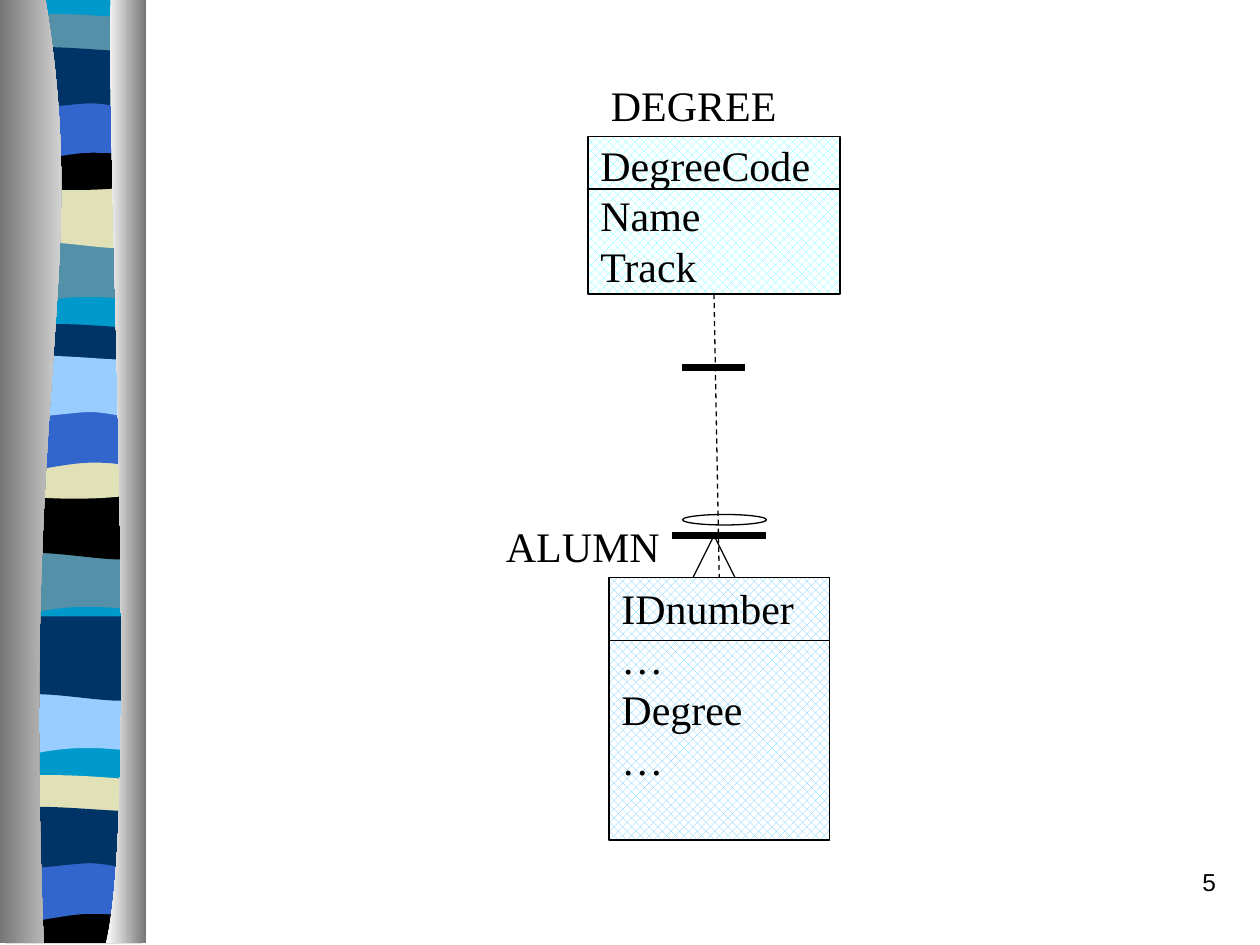
"""Build an entity-relationship slide for DEGREE and ALUMN beside a wavy striped border."""
from lxml.etree import SubElement
from pptx import Presentation
from pptx.dml.color import RGBColor
from pptx.enum.dml import MSO_LINE, MSO_PATTERN
from pptx.enum.shapes import MSO_CONNECTOR, MSO_SHAPE
from pptx.enum.text import MSO_ANCHOR, PP_ALIGN
from pptx.oxml.ns import qn
from pptx.util import Pt

COLORS = {
    "black": "000000", "white": "FFFFFF", "cyan": "0099CC", "teal": "5490A8",
    "sand": "E1E1B7", "blue": "3366CC", "navy": "003366", "sky": "99CCFF",
    "grey": "767676", "aqua": "66FFFF", "azure": "66CCFF",
}
COLORS = {name: RGBColor.from_string(value) for name, value in COLORS.items()}

WAVES = {
    "ebb": [(78, 0), (78, 39), (24, 31, 14, 45, 0, 39), (0, 0)],
    "swell": [(78, -7), (78, 39), (65, 46, 24, 33, 0, 39), (0, -7)],
    "arch": [(78, -4), (78, 17), (65, 20, 13, 20, 0, 17), (0, -4),
             (5, -8, 17, -7, 30, -7), (43, -7, 68, -5, 78, -4)],
    "sag": [(78, 0), (78, 27), (65, 32, 13, 32, 0, 27), (0, 0), (48, 4, 62, 0, 78, 0)],
    "dome": [(78, 0), (78, 40), (66, 34, 61, 34, 48, 34), (35, 34, 12, 40, 0, 40), (0, 0)],
    "ripple": [(78, -4), (78, 26), (73, 32, 61, 26, 48, 26), (35, 26, 8, 32, 0, 26),
               (0, -4), (11, -9, 53, -4, 66, -4)],
}
STRIPES = [
    (4, {"ebb": (133.2, "teal"), "swell": (100.8, "sand"), "arch": (15.1, "teal"),
         "sag": (77.8, "black"), "dome": (53.3, "blue"), "ripple": (33.1, "navy")}),
    (3.6, {"ebb": (310.3, "teal"), "swell": (278.6, "black"), "arch": (192.2, "navy"),
           "sag": (254.2, "sand"), "dome": (230.4, "blue"), "ripple": (209.5, "sky")}),
    (3.2, {"ebb": (391, "sky"), "swell": (359.3, "navy"), "arch": (450, "sand"),
           "sag": (512.6, "black"), "dome": (488.2, "blue"), "ripple": (467.3, "navy")}),
]
CURTAINS = [
    ([(26, 0), (52, 156, 12, 213, 25, 539), (0, 539), (0, 0)], ("grey", "white")),
    ([(63.4, 0), (60.5, 90, 80, 465, 60.5, 539), (83.5, 539), (83.5, 0)], ("white", "grey")),
]

presentation = Presentation()
presentation.slide_width, presentation.slide_height = Pt(720), Pt(540)
slide = presentation.slides.add_slide(presentation.slide_layouts[6])
shapes = slide.shapes
border = shapes.add_group_shape()


def add_outline(left, top, segments):
    """Draw a closed outline from line ends and cubic curves."""
    points = [(Pt(left + x), Pt(min(top + y, 539)))
              for segment in segments for x, y in zip(segment[::2], segment[1::2])]
    builder = border.shapes.build_freeform(*points[0])
    builder.add_line_segments(points[1:], close=True)
    outline = builder.convert_to_shape()
    lines = iter(list(outline._element.iter(qn("a:lnTo"))))
    for segment in segments[1:]:
        line = next(lines)
        if len(segment) == 6:
            curve = line.makeelement(qn("a:cubicBezTo"))
            line.addprevious(curve)
            for part in (line, next(lines), next(lines)):
                curve.append(part[0])
                part.getparent().remove(part)
    outline.shadow.inherit = False
    outline.line.fill.background()
    return outline


def write_text(shape, lines, size=24, font="Times New Roman", align=PP_ALIGN.LEFT, margin=3.6):
    """Fill a shape with one paragraph for each line."""
    frame_format = {"word_wrap": True, "vertical_anchor": MSO_ANCHOR.TOP, "margin_top": Pt(margin)}
    font_format = {"size": Pt(size), "name": font}
    frame = shape.text_frame
    frame.text = "\n".join(lines)
    for name, value in frame_format.items():
        setattr(frame, name, value)
    for paragraph in frame.paragraphs:
        paragraph.alignment = align
        for name, value in font_format.items():
            setattr(paragraph.runs[0].font, name, value)
        paragraph.runs[0].font.color.rgb = COLORS["black"]


backdrop = add_outline(4.3, 0, [(0, 0), (78, 0), (78, 538), (0, 538)])
backdrop.fill.solid()
backdrop.fill.fore_color.rgb = COLORS["cyan"]

for left, stripes in STRIPES:
    for wave, (top, color) in stripes.items():
        stripe = add_outline(left, top, WAVES[wave])
        stripe.fill.solid()
        stripe.fill.fore_color.rgb = COLORS[color]

for segments, colors in CURTAINS:
    curtain = add_outline(0, 0, segments)
    curtain.fill.gradient()
    curtain.fill.gradient_angle = 0
    for stop, color in zip(curtain.fill.gradient_stops, colors):
        stop.color.rgb = COLORS[color]

slide_number = shapes.add_textbox(Pt(552), Pt(492), Pt(150), Pt(36))
write_text(slide_number, ["5"], 14, "Arial", PP_ALIGN.RIGHT)

entities = []
for left, top, width, height, color, margin, lines in [
    (336, 78, 144, 90, "aqua", 1.7, ["DegreeCode", "Name", "Track"]),
    (348, 330, 126, 150, "azure", 2.8, ["IDnumber", "…", "Degree", "…"]),
]:
    entity = shapes.add_shape(MSO_SHAPE.FLOWCHART_PROCESS, Pt(left), Pt(top), Pt(width), Pt(height))
    entity.fill.patterned()
    entity.fill.pattern = MSO_PATTERN.PERCENT_50
    entity.fill.fore_color.rgb = COLORS[color]
    entity.fill.back_color.rgb = COLORS["white"]
    write_text(entity, lines, margin=margin)
    entities.append(entity)
degree, alumn = entities

optional_mark = shapes.add_shape(MSO_SHAPE.OVAL, Pt(390), Pt(294), Pt(48), Pt(6))
optional_mark.fill.background()
for shape in [*entities, optional_mark]:
    shape.shadow.inherit = False
    shape.line.color.rgb = COLORS["black"]
    shape.line.width = Pt(0.75)

for left, top, width, label in [(342, 42, 132, "DEGREE"), (282, 294, 114, "ALUMN")]:
    write_text(shapes.add_textbox(Pt(left), Pt(top), Pt(width), Pt(36)), [label])

connectors = {}
for role, start_x, start_y, end_x, end_y, width in [
    ("degree divider", 336, 108, 480, 108, 0.75),
    ("alumn divider", 348, 366, 474, 366, 0.75),
    ("one bar", 390, 210, 426, 210, 4.5),
    ("relationship", 408, 168, 411, 330, 0.75),
    ("many bar", 384, 306, 438, 306, 4.5),
    ("left crow foot", 408, 306, 396, 330, 0.75),
    ("right crow foot", 408, 306, 420, 330, 0.75),
]:
    connector = shapes.add_connector(MSO_CONNECTOR.STRAIGHT, Pt(start_x), Pt(start_y), Pt(end_x), Pt(end_y))
    connector.line.color.rgb = COLORS["black"]
    connector.line.width = Pt(width)
    connectors[role] = connector

relationship = connectors["relationship"]
relationship.line.dash_style = MSO_LINE.DASH
relationship.begin_connect(degree, 2)
relationship.end_connect(alumn, 0)
for connector in connectors.values():
    SubElement(connector._element.spPr, qn("a:effectLst"))

presentation.save("out.pptx")
